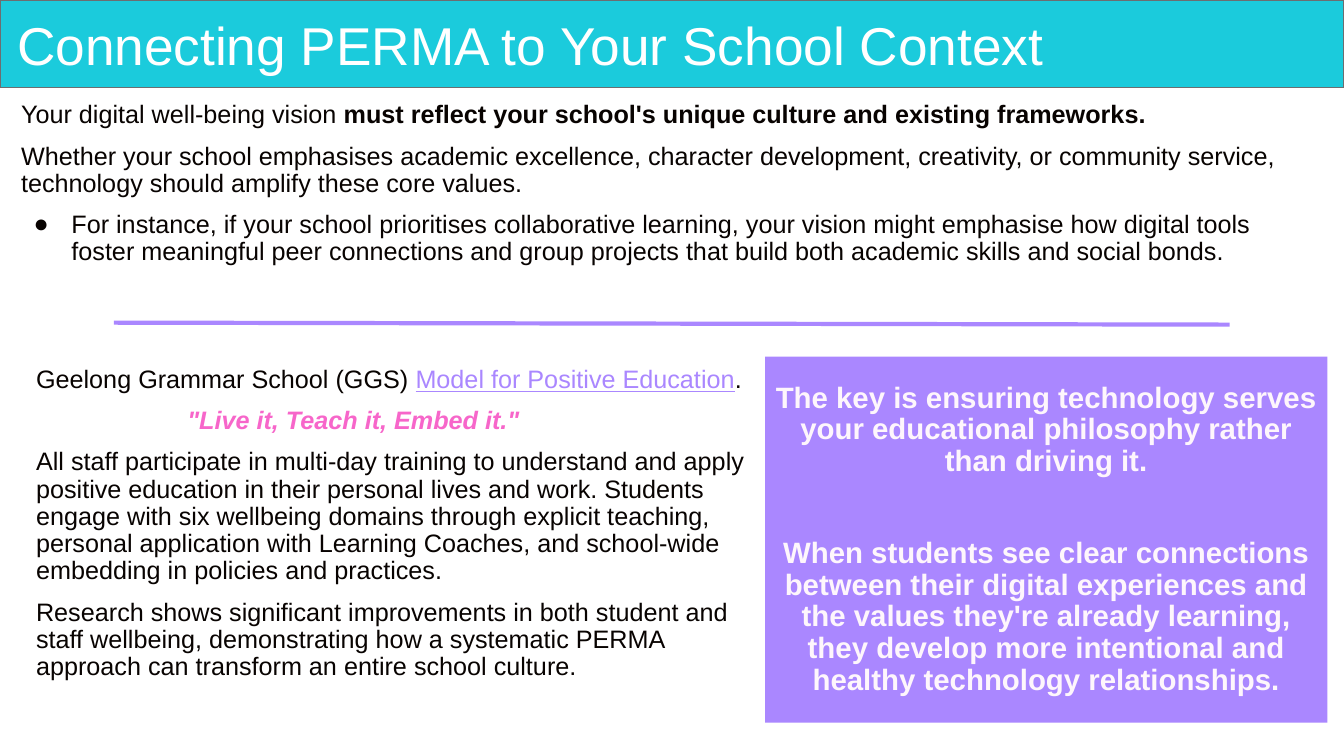
from lxml import etree
from pptx import Presentation
from pptx import util as u
from pptx.dml.color import RGBColor
from pptx.enum import shapes, text
from pptx.oxml.ns import qn

CYAN = RGBColor(0x1B, 0xCB, 0xDC)
GREY = RGBColor(0x6C, 0x6E, 0x70)
WHITE = RGBColor(0xFF, 0xFF, 0xFF)
INK = RGBColor(0x08, 0x03, 0x01)
LILAC = RGBColor(0xAA, 0x87, 0xFF)
PINK = RGBColor(0xF7, 0x66, 0xCA)
PALE = RGBColor(0xFE, 0xF6, 0xFC)


def run(para, words, size=18, color=INK, bold=False, italic=False, under=False):
    part = para.add_run()
    part.text = words
    font = part.font
    font.name, font.size, font.color.rgb = "Arial", u.Pt(size), color
    font.bold, font.italic, font.underline = bold, italic, under


class Deck:
    font = "Arial"
    space = 10
    lead = 0.9

    def __init__(self):
        self.file = Presentation()
        self.file.slide_width, self.file.slide_height = u.Cm(33.87), u.Cm(19.05)
        self.slide = self.file.slides.add_slide(self.file.slide_layouts[1])

    def place(self, item, box):
        item.left, item.top, item.width, item.height = map(u.Cm, box)

    def frame(self, item, side, top, anchor):
        area = item.text_frame
        area.word_wrap = True
        area.auto_size = text.MSO_AUTO_SIZE.NONE
        area.vertical_anchor = anchor
        area.margin_left = area.margin_right = u.Cm(side)
        area.margin_top = area.margin_bottom = u.Cm(top)
        return area

    def para(self, area, parts, align=text.PP_ALIGN.LEFT, left=0, hang=0,
             mark=None, gap=None, **style):
        first = not area.paragraphs[0].runs
        para = area.paragraphs[0] if first else area.add_paragraph()
        para.alignment, para.line_spacing = align, self.lead
        para.space_before = u.Pt(0 if first else gap or self.space)
        props = para._p.get_or_add_pPr()
        props.set("marL", str(u.Cm(left)))
        props.set("indent", str(u.Cm(hang)))
        bullet = etree.SubElement(props, qn("a:buChar" if mark else "a:buNone"))
        if mark:
            bullet.set("char", mark)
        for words, extra in parts:
            run(para, words, **{**style, **extra})

    def rect(self, box, fill, line=None, back=False):
        item = self.slide.shapes.add_shape(shapes.MSO_SHAPE.RECTANGLE, *map(u.Cm, box))
        item.shadow.inherit = False
        item.fill.solid()
        item.fill.fore_color.rgb = fill
        if line:
            item.line.color.rgb, item.line.width = line, u.Pt(1)
        else:
            item.line.fill.background()
        if back:
            self.slide.shapes._spTree.insert(2, item._element)
        return item

    def rule(self, ends, color, width):
        item = self.slide.shapes.add_connector(
            shapes.MSO_CONNECTOR.STRAIGHT, *map(u.Cm, ends))
        item.line.color.rgb, item.line.width = color, u.Pt(width)
        etree.SubElement(item._element.spPr, qn("a:effectLst"))

    def title(self, box, words):
        item = self.slide.shapes.title
        self.place(item, box)
        area = self.frame(item, 0.15, 0.15, text.MSO_ANCHOR.MIDDLE)
        self.para(area, [(words, {})], size=38, color=WHITE)

    def body(self, box):
        item = self.slide.placeholders[1]
        self.place(item, box)
        return self.frame(item, 0.25, 0.13, text.MSO_ANCHOR.TOP)

    def note(self, box):
        item = self.slide.shapes.add_textbox(*map(u.Cm, box))
        return self.frame(item, 0.25, 0.25, text.MSO_ANCHOR.TOP)

    def panel(self, box, fill):
        return self.frame(self.rect(box, fill), 0.25, 0.13, text.MSO_ANCHOR.MIDDLE)


def main():
    deck = Deck()
    deck.rect((0, 0, 33.87, 2.21), CYAN, GREY, back=True)
    deck.title((0.28, 0.23, 33.17, 1.98), "Connecting PERMA to Your School Context")

    body = deck.body((0.28, 2.44, 33.17, 5.08))
    deck.para(body, [
        ("Your digital well-being vision ", {}),
        ("must reflect your school's unique culture and existing frameworks.",
         {"bold": True})])
    deck.para(body, [(
        "Whether your school emphasises academic excellence, character development, "
        "creativity, or community service, technology should amplify these core values.",
        {})])
    deck.para(body, [(
        "For instance, if your school prioritises collaborative learning, your vision "
        "might emphasise how digital tools foster meaningful peer connections and group "
        "projects that build both academic skills and social bonds.", {})],
        left=1.27, hang=-0.95, mark="●")

    deck.rule((2.87, 8.13, 30.99, 8.18), LILAC, 3)

    note = deck.note((0.66, 8.99, 18.62, 8.51))
    deck.para(note, [
        ("Geelong Grammar School (GGS) ", {}),
        ("Model for Positive Education", {"color": LILAC, "under": True}),
        (".", {})])
    deck.para(note, [('"Live it, Teach it, Embed it."', {})],
              left=3.81, color=PINK, bold=True, italic=True)
    deck.para(note, [(
        "All staff participate in multi-day training to understand and apply positive "
        "education in their personal lives and work. Students engage with six wellbeing "
        "domains through explicit teaching, personal application with Learning Coaches, "
        "and school-wide embedding in policies and practices.", {})])
    deck.para(note, [(
        "Research shows significant improvements in both student and staff wellbeing, "
        "demonstrating how a systematic PERMA approach can transform an entire school "
        "culture.", {})])

    panel = deck.panel((19.28, 8.99, 14.17, 9.22), LILAC)
    for words in (
            "The key is ensuring technology serves your educational philosophy rather "
            "than driving it.",
            "When students see clear connections between their digital experiences and "
            "the values they're already learning, they develop more intentional and "
            "healthy technology relationships."):
        deck.para(panel, [(words, {})], align=text.PP_ALIGN.CENTER, gap=43,
                  size=21, color=PALE, bold=True)

    deck.file.save("out.pptx")


if __name__ == "__main__":
    main()
